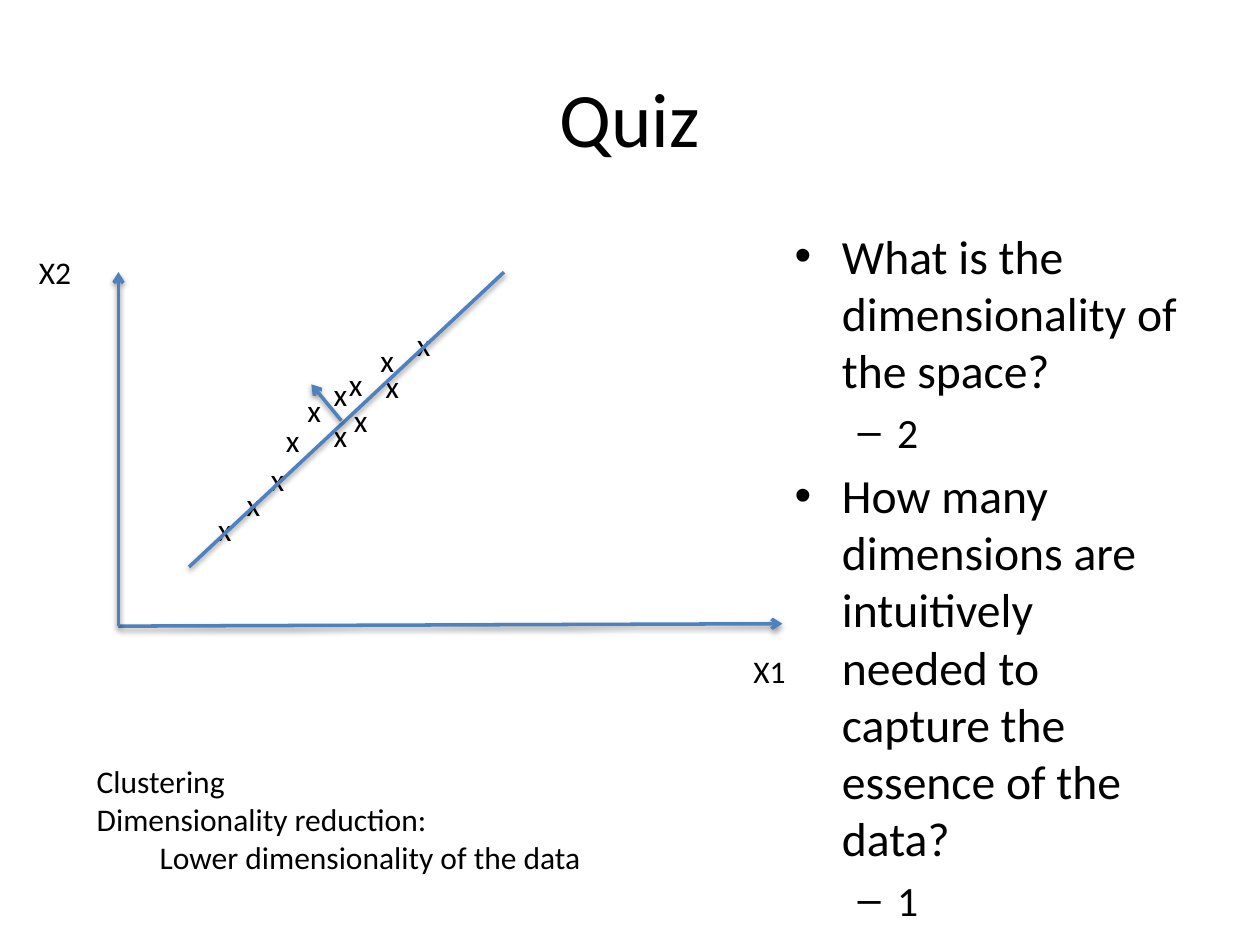
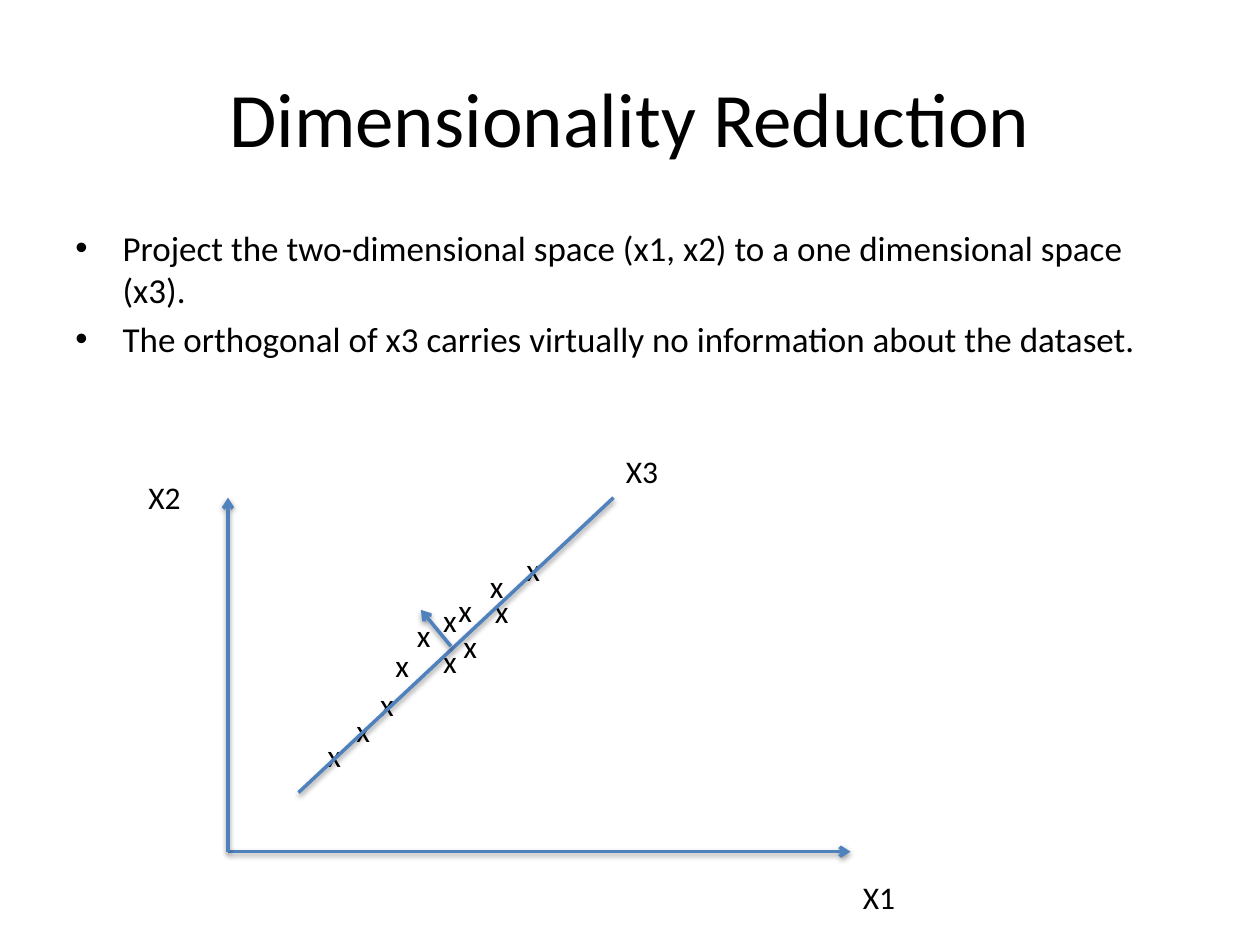
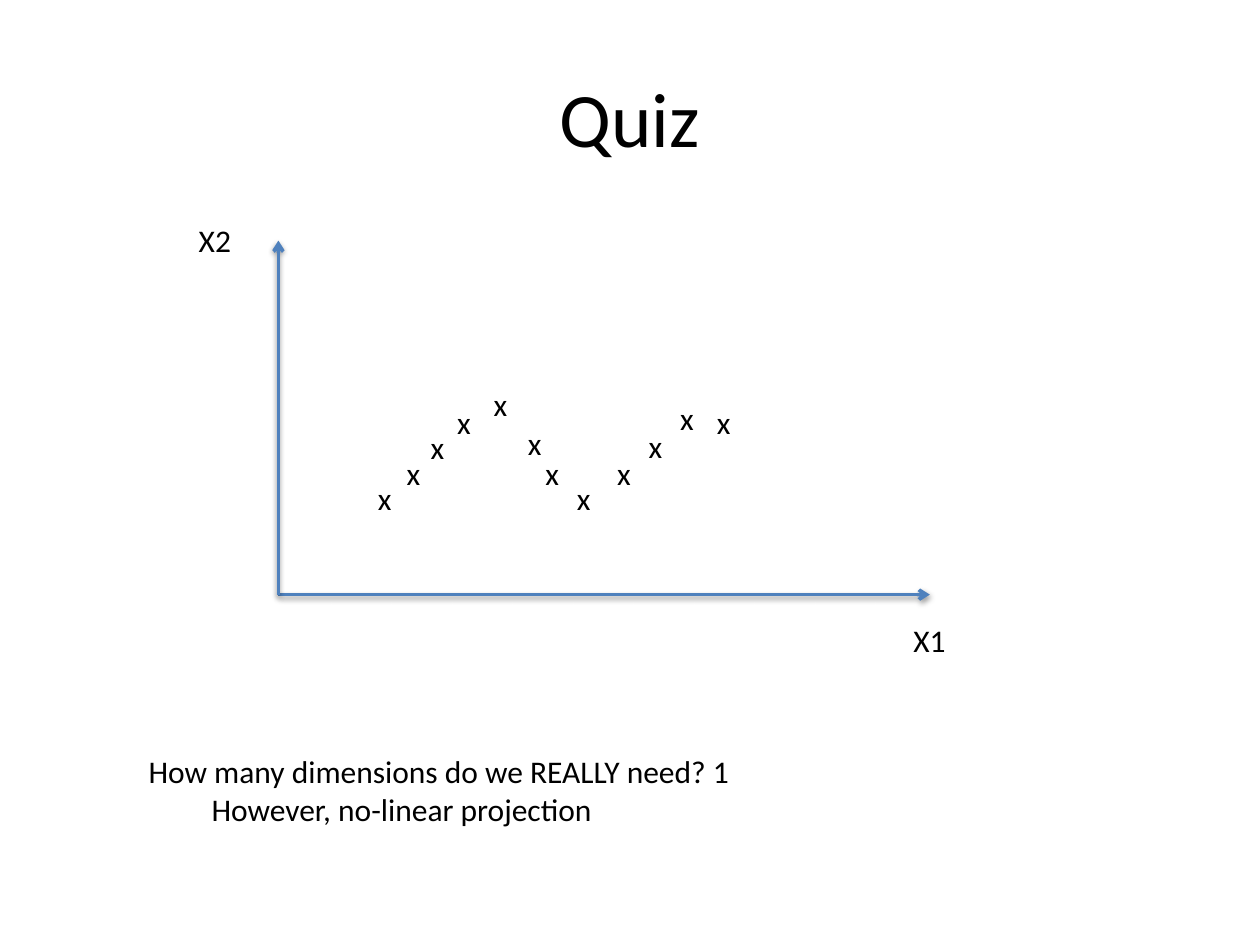
"""Build three slides on quizzes and dimensionality reduction."""

from dataclasses import dataclass
from typing import Any

import lxml.etree
import pptx
import pptx.dml.color
import pptx.enum.shapes
import pptx.enum.text
import pptx.oxml.ns
import pptx.util

Pt = pptx.util.Pt
qn = pptx.oxml.ns.qn
Point = tuple[float, float]

FONT = "Calibri"
INK = "000000"
PAPER = "FFFFFF"
AXIS_BLUE = "4F81BD"
AXIS_HEIGHT = 202.3
LABEL_SIZE = (33, 29)
MARK_SIZE = (18, 29)
FITTED = {
    "word_wrap": False,
    "auto_size": pptx.enum.text.MSO_AUTO_SIZE.SHAPE_TO_FIT_TEXT,
}
MARK_FRAME = {**FITTED, "word_wrap": True}
FIXED = {"word_wrap": True, "auto_size": pptx.enum.text.MSO_AUTO_SIZE.NONE}
TITLE_FRAME = {**FIXED, "vertical_anchor": pptx.enum.text.MSO_ANCHOR.MIDDLE}


@dataclass(frozen=True)
class Para:
    text: str
    size: float = 18
    bullet: str = ""
    indent: float = 0
    hang: float = 0
    centred: bool = False


@dataclass(frozen=True)
class Box:
    left: float
    top: float
    width: float
    height: float


@dataclass(frozen=True)
class Stroke:
    start: Point
    end: Point
    arrow: bool = True


@dataclass(frozen=True)
class Plot:
    origin: Point
    x_tip: Point
    marks: list[Point]
    strokes: tuple[Stroke, ...] = ()
    labels: tuple[tuple[str, Point], ...] = ()


@dataclass(frozen=True)
class Page:
    title: str
    plot: Plot
    body_box: Box | None = None
    body: tuple[Para, ...] = ()
    note_box: Box | None = None
    note: tuple[Para, ...] = ()


AXIS_LABELS = (("X1", (355.7, 11.3)), ("X2", (-52.6, -216.9)))
TREND = (
    Stroke((40.3, -33.8), (220.3, -202.3), arrow=False),
    Stroke((127.4, -117.4), (110.2, -138.2)),
)
LINEAR_MARKS = [
    (124.6, -152.6), (115.9, -146.9), (100.8, -138.2), (127.4, -132),
    (79.9, -98.6), (66.2, -84.2), (49.7, -69.8), (115.9, -123.5),
    (88.6, -121), (145.4, -151.9), (142.6, -166.3), (163.4, -175.7),
]
WAVE_MARKS = [
    (186.5, -84.2), (163.4, -69.8), (135.4, -100.8), (145.4, -84.2),
    (79.9, -98.6), (66.2, -84.2), (49.7, -69.8), (115.9, -123.1),
    (95, -113), (222.5, -115.2), (204.5, -99.4), (243.4, -113),
]


def question(text: str, size: float = 27.2) -> Para:
    """Return a first-level bullet."""
    return Para(text, size, "•", 27, -27)


def answer(text: str) -> Para:
    """Return a second-level bullet."""
    return Para(text, 23.8, "–", 58.5, -22.5)


PAGES = (
    Page(
        "Quiz",
        Plot((67.7, 357.8), (379.4, -1.4), LINEAR_MARKS, TREND),
        Box(447, 126, 237, 356.4),
        (
            question("What is the dimensionality of the space?"),
            answer("2"),
            question("How many dimensions are intuitively needed to capture "
                     "the essence of the data?"),
            answer("1"),
        ),
        Box(48.2, 432, 294.5, 72.7),
        (
            Para("Clustering"),
            Para("Dimensionality reduction:"),
            Para("Lower dimensionality of the data", indent=36),
        ),
    ),
    Page(
        "Dimensionality Reduction",
        Plot((130.3, 486.7), (355.7, 0), LINEAR_MARKS, TREND,
             (("X3", (220.3, -231.8)),)),
        Box(36, 126, 648, 95.8),
        (
            question("Project the two-dimensional space (x1, x2) to a one "
                     "dimensional space (x3).", 20),
            question("The orthogonal of x3 carries virtually no information "
                     "about the dataset.", 20),
        ),
    ),
    Page(
        "Quiz",
        Plot((159.1, 339.8), (372.2, 0), WAVE_MARKS),
        note_box=Box(77.8, 426.2, 350.6, 51),
        note=(
            Para("How many dimensions do we REALLY need? 1"),
            Para("However, no-linear projection", indent=36),
        ),
    ),
)


def colour(code: str) -> pptx.dml.color.RGBColor:
    """Turn a hex string into a colour."""
    return pptx.dml.color.RGBColor.from_string(code)


def assign(target: Any, values: dict[str, Any]) -> None:
    """Set each named attribute on the target."""
    for name, value in values.items():
        setattr(target, name, value)


def shift(origin: Point, offset: Point) -> Point:
    """Move a point by an offset."""
    return origin[0] + offset[0], origin[1] + offset[1]


def write_para(paragraph: Any, para: Para) -> None:
    """Write one formatted paragraph."""
    align = pptx.enum.text.PP_ALIGN
    run = paragraph.add_run()
    run.text = para.text
    assign(run.font, {"name": FONT, "size": Pt(para.size)})
    run.font.color.rgb = colour(INK)
    assign(paragraph, {
        "alignment": align.CENTER if para.centred else align.LEFT,
        "space_before": Pt(para.size * 0.2 if para.bullet else 0),
    })
    properties = paragraph._p.get_or_add_pPr()
    properties.set("marL", str(Pt(para.indent)))
    properties.set("indent", str(Pt(para.hang)))
    if para.bullet:
        lxml.etree.SubElement(properties, qn("a:buFont"), typeface="Arial")
        lxml.etree.SubElement(properties, qn("a:buChar"), char=para.bullet)


def add_text(slide: Any, box: Box, paras: tuple[Para, ...],
             frame_format: dict[str, Any]) -> None:
    """Add a text box holding the paragraphs."""
    frame = slide.shapes.add_textbox(
        Pt(box.left), Pt(box.top), Pt(box.width), Pt(box.height)).text_frame
    assign(frame, frame_format)
    for index, para in enumerate(paras):
        write_para(frame.add_paragraph() if index else frame.paragraphs[0], para)


def add_stroke(slide: Any, origin: Point, stroke: Stroke) -> None:
    """Draw a shadowed line, with an arrowhead if asked."""
    ends = (*shift(origin, stroke.start), *shift(origin, stroke.end))
    connector = slide.shapes.add_connector(
        pptx.enum.shapes.MSO_CONNECTOR.STRAIGHT, *(Pt(value) for value in ends))
    connector.line.color.rgb = colour(AXIS_BLUE)
    connector.line.width = Pt(2)
    properties = connector.element.spPr
    if stroke.arrow:
        lxml.etree.SubElement(
            properties.find(qn("a:ln")), qn("a:tailEnd"), type="arrow")
    effects = lxml.etree.SubElement(properties, qn("a:effectLst"))
    shadow = lxml.etree.SubElement(
        effects, qn("a:outerShdw"), blurRad=str(Pt(3.1)), dist=str(Pt(1.6)),
        dir="5400000", rotWithShape="0")
    tint = lxml.etree.SubElement(shadow, qn("a:srgbClr"), val=INK)
    lxml.etree.SubElement(tint, qn("a:alpha"), val="38000")


def add_plot(slide: Any, plot: Plot) -> None:
    """Draw axes, labels, marks and trend strokes from the origin."""
    axes = (Stroke((0, 0), plot.x_tip), Stroke((0, 0), (0, -AXIS_HEIGHT)))
    for axis in axes:
        add_stroke(slide, plot.origin, axis)
    for name, offset in AXIS_LABELS + plot.labels:
        add_text(slide, Box(*shift(plot.origin, offset), *LABEL_SIZE),
                 (Para(name),), FITTED)
    for offset in plot.marks:
        add_text(slide, Box(*shift(plot.origin, offset), *MARK_SIZE),
                 (Para("x"),), MARK_FRAME)
    for stroke in plot.strokes:
        add_stroke(slide, plot.origin, stroke)


def add_page(deck: Any, page: Page) -> None:
    """Add one slide."""
    slide = deck.slides.add_slide(deck.slide_layouts[6])
    slide.background.fill.solid()
    slide.background.fill.fore_color.rgb = colour(PAPER)
    add_text(slide, Box(36, 21.6, 648, 90),
             (Para(page.title, 44, centred=True),), TITLE_FRAME)
    if page.body_box:
        add_text(slide, page.body_box, page.body, FIXED)
    add_plot(slide, page.plot)
    if page.note_box:
        add_text(slide, page.note_box, page.note, FITTED)


def main() -> None:
    """Build and save the deck."""
    deck = pptx.Presentation()
    assign(deck, {"slide_width": Pt(720), "slide_height": Pt(540)})
    for page in PAGES:
        add_page(deck, page)
    deck.save("out.pptx")


if __name__ == "__main__":
    main()
